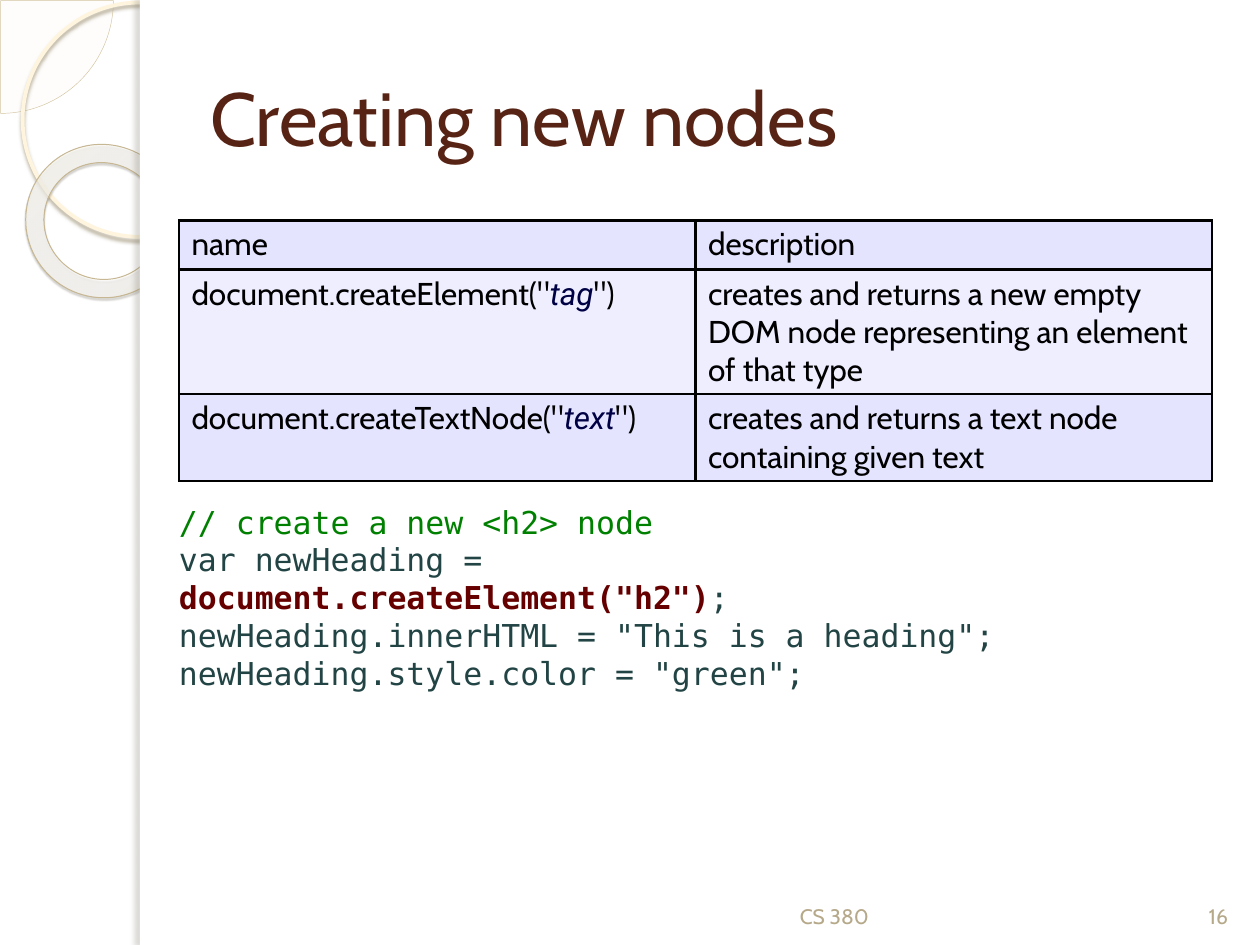
import pptx
import pptx.dml.color
import pptx.enum.shapes
import pptx.enum.text
import pptx.oxml
import pptx.oxml.ns
import pptx.util

Inches = pptx.util.Inches
Pt = pptx.util.Pt
Kind = pptx.enum.shapes.MSO_SHAPE
Anchor = pptx.enum.text.MSO_ANCHOR
Align = pptx.enum.text.PP_ALIGN
NS = pptx.oxml.ns.nsdecls("a")


def hue(code):
    return pptx.dml.color.RGBColor.from_string(code)


def write(frame, lines, size, align=Align.LEFT):
    """Fill a frame; each line is a list of (text, font, colour, style) runs."""
    frame.word_wrap = True
    for i, line in enumerate(lines):
        para = frame.paragraphs[0] if i == 0 else frame.add_paragraph()
        para.alignment = align
        for text, face, code, style in line:
            run = para.add_run()
            run.text = text
            font = run.font
            font.name, font.size = face, Pt(size)
            font.bold, font.italic = style == "bold", style == "italic"
            font.color.rgb = hue(code)


deck = pptx.Presentation()
deck.slide_width, deck.slide_height = Inches(10), Inches(7.5)
slide = deck.slides.add_slide(deck.slide_layouts[6])
shapes = slide.shapes

# Side ornament and page: kind, box, adjustments, turn, fill, line,
# shadow (colour, opacity %, blur pt, distance pt, angle)
parts = [
    (Kind.PIE, (-0.89, -0.89, 1.79, 1.79), (0, 54), 0,
     "FEFAF4", ("D3C39F", 0.25), None),
    (Kind.OVAL, (0.18, 0.02, 1.86, 1.86), (), 0,
     None, ("FFF5DE", 2.15), ("B0A68F", 85, 2, 2, 90)),
    (Kind.DONUT, (0.2, 1.15, 1.23, 1.21), (0.12,), 38.6,
     None, ("C7B893", 0.58), ("5A5444", 35, 1, 1.2, 75)),
    (Kind.RECTANGLE, (1.11, 0, 8.89, 7.5), (), 0, "FFFFFF", None, None),
    (Kind.RECTANGLE, (1.11, 0, 0.08, 7.5), (), 0,
     "FFFFFF", None, ("736F63", 25, 3, 3, 180)),
]
for kind, box, bends, turn, fill, line, shade in parts:
    part = shapes.add_shape(kind, *map(Inches, box))
    for i, bend in enumerate(bends):
        part.adjustments[i] = bend
    part.rotation = turn
    if fill:
        part.fill.solid()
        part.fill.fore_color.rgb = hue(fill)
    else:
        part.fill.background()
    if line:
        part.line.color.rgb = hue(line[0])
        part.line.width = Pt(line[1])
    else:
        part.line.fill.background()
    part.shadow.inherit = False
    props = part.element.spPr
    if shade:
        code, alpha, blur, dist, angle = shade
        props.find(pptx.oxml.ns.qn("a:effectLst")).append(pptx.oxml.parse_xml(
            f'<a:outerShdw {NS} blurRad="{Pt(blur)}" dist="{Pt(dist)}" '
            f'dir="{angle * 60000}" algn="tl" rotWithShape="0">'
            f'<a:srgbClr val="{code}"><a:alpha val="{alpha * 1000}"/>'
            '</a:srgbClr></a:outerShdw>'))
    if kind == Kind.PIE:
        tint = props.find(".//" + pptx.oxml.ns.qn("a:srgbClr"))
        tint.append(pptx.oxml.parse_xml(f'<a:alpha {NS} val="33000"/>'))
    if kind == Kind.DONUT:
        stops = "".join(
            f'<a:gs pos="{pos * 1000}"><a:srgbClr val="{code}">'
            f'<a:alpha val="{alpha * 1000}"/></a:srgbClr></a:gs>'
            for pos, code, alpha in [(0, "FFFCF6", 70), (70, "FFFEFB", 55),
                                     (100, "F0D28E", 60)])
        blank = props.find(pptx.oxml.ns.qn("a:noFill"))
        props.replace(blank, pptx.oxml.parse_xml(
            f'<a:gradFill {NS}><a:gsLst>{stops}</a:gsLst><a:path path="circle">'
            '<a:fillToRect l="-408000" t="-50000" r="508000" b="150000"/>'
            '</a:path></a:gradFill>'))

# Title and footer
labels = [
    ("Creating new nodes", (1.57, 0.3, 8.2, 1.25), 43, "572314",
     Anchor.MIDDLE, Align.LEFT),
    ("CS 380", (6.25, 6.9, 3.17, 0.52), 12, "B6A98A",
     Anchor.BOTTOM, Align.LEFT),
    ("16", (9.42, 6.9, 0.5, 0.52), 12, "B6A98A",
     Anchor.BOTTOM, Align.CENTER),
]
for text, box, size, code, anchor, align in labels:
    frame = shapes.add_textbox(*map(Inches, box)).text_frame
    frame.vertical_anchor = anchor
    write(frame, [[(text, "Cabin", code, "")]], size, align)

# Method table: plain text, with the argument as a middle part
rows = [
    (0.39, "E4E4FF", ["name"], ["description"]),
    (0.99, "EEEEFF", ['document.createElement("', "tag", '")'],
     ["creates and returns a new empty DOM node representing an element "
      "of that type"]),
    (0.69, "E4E4FF", ['document.createTextNode("', "text", '")'],
     ["creates and returns a text node containing given text"]),
]
table = shapes.add_table(3, 2, Inches(1.42), Inches(1.75),
                         Inches(8.2), Inches(2.05)).table
for y, (height, fill, *cells) in enumerate(rows):
    table.rows[y].height = Inches(height)
    for x, bits in enumerate(cells):
        cell = table.cell(y, x)
        cell.margin_left = cell.margin_right = Inches(0.1)
        cell.margin_top = cell.margin_bottom = Inches(0.04)
        for side in "LRTB":
            cell._tc.get_or_add_tcPr().append(pptx.oxml.parse_xml(
                f'<a:ln{side} {NS} w="{Pt(1.5)}"><a:solidFill>'
                f'<a:srgbClr val="000000"/></a:solidFill></a:ln{side}>'))
        cell.fill.solid()
        cell.fill.fore_color.rgb = hue(fill)
        runs = [(bit, "Roboto", "000044", "italic") if i == 1
                else (bit, "Cabin", "000000", "") for i, bit in enumerate(bits)]
        write(cell.text_frame, [runs], 18)

# Code sample
code = [
    [("// create a new <h2> node", "008000", "")],
    [("var newHeading = ", "224444", ""),
     ('document.createElement("h2")', "660000", "bold"),
     (";", "224444", "")],
    [('newHeading.innerHTML = "This is a heading";', "224444", "")],
    [('newHeading.style.color = "green";', "224444", "")],
]
frame = shapes.add_textbox(Inches(1.42), Inches(4.08),
                           Inches(6.51), Inches(1.44)).text_frame
frame.margin_left = frame.margin_right = 0
frame.margin_top, frame.margin_bottom = Inches(0.05), Inches(0.17)
frame.vertical_anchor = Anchor.MIDDLE
write(frame, [[(text, "DejaVu Sans Mono", tone, style)
               for text, tone, style in line] for line in code], 18)

deck.save("out.pptx")
